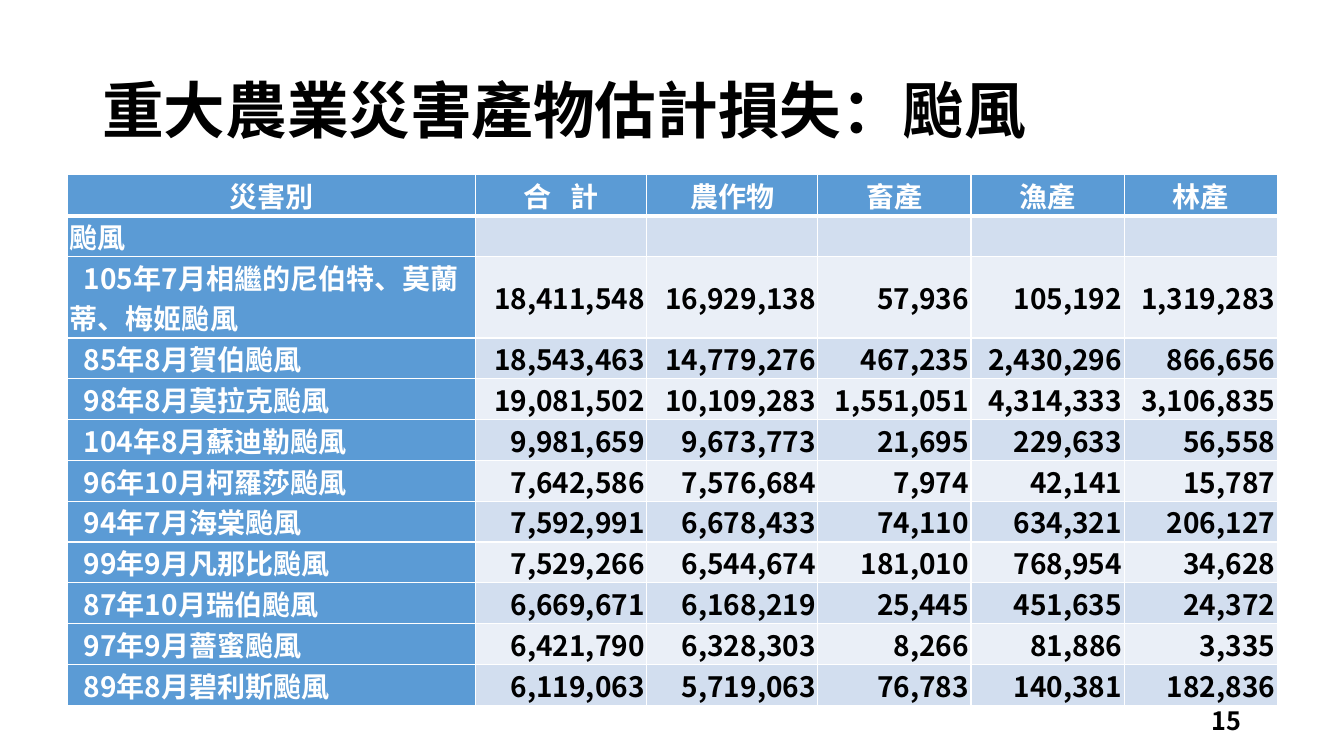
from dataclasses import dataclass

from lxml.etree import SubElement
from pptx import Presentation
from pptx.dml.color import RGBColor
from pptx.enum.text import MSO_ANCHOR, PP_ALIGN
from pptx.oxml import parse_xml
from pptx.oxml.ns import nsdecls, qn
from pptx.util import Pt


@dataclass(frozen=True)
class Theme:
    font: str = "Noto Sans CJK SC"
    dark: str = "000000"
    light: str = "FFFFFF"
    head: str = "5B9BD5"
    bands: tuple = ("EAEFF7", "D2DEEF")
    title: int = 44
    body: int = 20
    page: int = 18


theme = Theme()


def write(frame, text, size, color, align):
    """Put one bold paragraph, centred vertically, into a text frame."""
    frame.word_wrap = True
    frame.vertical_anchor = MSO_ANCHOR.MIDDLE
    para = frame.paragraphs[0]
    para.text = text
    para.alignment = align
    font = para.font
    font.name, font.size, font.bold = theme.font, Pt(size), True
    font.color.rgb = RGBColor.from_string(color)
    props = para._p.pPr.find(qn("a:defRPr"))
    SubElement(props, qn("a:ea"), typeface=theme.font)
    return para


def edge(cell, sides):
    """Draw white borders; sides maps L, R, T, B to a width in points."""
    props = cell._tc.get_or_add_tcPr()
    for spot, (side, width) in enumerate(sides.items()):
        props.insert(spot, parse_xml(
            f'<a:ln{side} {nsdecls("a")} w="{Pt(width)}"><a:solidFill>'
            f'<a:srgbClr val="{theme.light}"/></a:solidFill></a:ln{side}>'))


heads = ["災害別", "合   計", "農作物", "畜產", "漁產", "林產"]
group = ["颱風", "", "", "", "", ""]
storms = [
    ["105年7月相繼的尼伯特、莫蘭蒂、梅姬颱風", "18,411,548", "16,929,138", "57,936", "105,192", "1,319,283"],
    ["85年8月賀伯颱風", "18,543,463", "14,779,276", "467,235", "2,430,296", "866,656"],
    ["98年8月莫拉克颱風", "19,081,502", "10,109,283", "1,551,051", "4,314,333", "3,106,835"],
    ["104年8月蘇迪勒颱風", "9,981,659", "9,673,773", "21,695", "229,633", "56,558"],
    ["96年10月柯羅莎颱風", "7,642,586", "7,576,684", "7,974", "42,141", "15,787"],
    ["94年7月海棠颱風", "7,592,991", "6,678,433", "74,110", "634,321", "206,127"],
    ["99年9月凡那比颱風", "7,529,266", "6,544,674", "181,010", "768,954", "34,628"],
    ["87年10月瑞伯颱風", "6,669,671", "6,168,219", "25,445", "451,635", "24,372"],
    ["97年9月薔蜜颱風", "6,421,790", "6,328,303", "8,266", "81,886", "3,335"],
    ["89年8月碧利斯颱風", "6,119,063", "5,719,063", "76,783", "140,381", "182,836"],
]
rows = [heads, group, *storms]
widths = [291.5, 122.2, 122.2, 109.4, 109.4, 109.4]
line = 29.15

deck = Presentation()
deck.slide_width, deck.slide_height = Pt(960), Pt(540)
slide = deck.slides.add_slide(deck.slide_layouts[6])

title = slide.shapes.add_textbox(Pt(66), Pt(28.75), Pt(828), Pt(104.4))
para = write(title.text_frame, "重大農業災害產物估計損失：颱風",
             theme.title, theme.dark, PP_ALIGN.LEFT)
para.line_spacing = 0.9

table = slide.shapes.add_table(
    len(rows), len(heads), Pt(48.4), Pt(124.9),
    Pt(sum(widths)), Pt(line * (len(rows) + 1))).table
table.horz_banding = False
for col, width in zip(table.columns, widths):
    col.width = Pt(width)

for r, row in enumerate(rows):
    # The first storm's name takes two lines
    table.rows[r].height = Pt(line * (2 if r == 2 else 1))
    for c, text in enumerate(row):
        cell = table.cell(r, c)
        cell.margin_left = cell.margin_right = Pt(1.5)
        cell.margin_top = cell.margin_bottom = 0
        cell.vertical_anchor = MSO_ANCHOR.MIDDLE
        label = r == 0 or c == 0
        cell.fill.solid()
        cell.fill.fore_color.rgb = RGBColor.from_string(
            theme.head if label else theme.bands[r % 2])
        edge(cell, {"L": 1, "R": 1, "T": 3 if r == 1 else 1,
                    "B": 3 if r == 0 else 1})
        if not text:
            continue
        if r == 0:
            align = PP_ALIGN.CENTER
        else:
            align = PP_ALIGN.LEFT if c == 0 else PP_ALIGN.RIGHT
        para = write(cell.text_frame, text, theme.body,
                     theme.light if label else theme.dark, align)
        if c == 0 and r > 1:
            para._p.pPr.set("indent", str(Pt(10)))

page = slide.shapes.add_textbox(Pt(678), Pt(500.5), Pt(216), Pt(28.75))
write(page.text_frame, "15", theme.page, theme.dark, PP_ALIGN.RIGHT)

deck.save("out.pptx")
